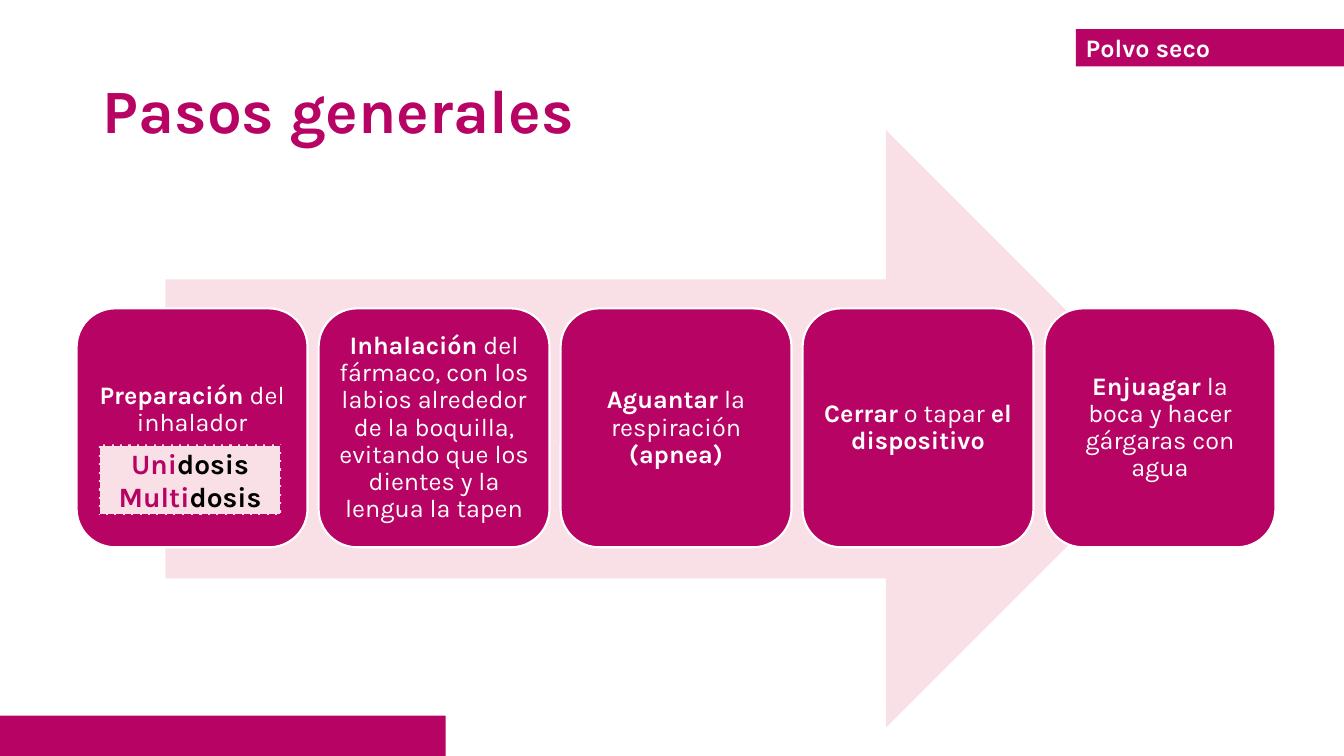
from dataclasses import dataclass

from pptx import Presentation
from pptx.dml.color import RGBColor
from pptx.enum.dml import MSO_LINE
from pptx.enum.shapes import MSO_SHAPE as Preset
from pptx.enum.text import MSO_ANCHOR as Anchor, MSO_AUTO_SIZE as AutoSize, PP_ALIGN as Align
from pptx.shapes.autoshape import Shape
from pptx.slide import Slide
from pptx.util import Emu, Pt

EMU_PER_PX = 9144  # 100 px to the inch
FONT = "Karla"
COLORS = {"magenta": "B70364", "pink": "F9E0E7", "white": "FFFFFF", "black": "000000"}

STEP_LEFT, STEP_TOP, STEP_WIDTH, STEP_HEIGHT = 76, 306, 229, 237
STEP_PITCH = 240
STEP_INSET = 7


@dataclass(frozen=True)
class Span:
    text: str
    bold: bool = True
    color: str = "white"


@dataclass(frozen=True)
class Step:
    spans: tuple[Span, ...]
    bottom_inset: int = STEP_INSET


STEPS = (
    Step((Span("Preparación"), Span(" del inhalador", bold=False)), bottom_inset=43),
    Step((
        Span("Inhalación"),
        Span(" del fármaco, con los labios alrededor de la boquilla, "
             "evitando que los dientes y la lengua la tapen", bold=False),
    )),
    Step((Span("Aguantar"), Span(" la respiración ", bold=False), Span("(apnea)"))),
    Step((Span("Cerrar"), Span(" o tapar ", bold=False), Span("el dispositivo"))),
    Step((Span("Enjuagar"), Span(" la boca y hacer gárgaras con agua", bold=False))),
)
DOSE_TYPES = (
    Span("Uni", color="magenta"), Span("dosis ", color="black"),
    Span("Multi", color="magenta"), Span("dosis", color="black"),
)


def px(length: int) -> Emu:
    return Emu(length * EMU_PER_PX)


def rgb(color: str) -> RGBColor:
    return RGBColor.from_string(COLORS[color])


def add_block(slide: Slide, preset: Preset, left: int, top: int, width: int, height: int,
              fill: str = "magenta", outline: str | None = None) -> Shape:
    block = slide.shapes.add_shape(preset, px(left), px(top), px(width), px(height))
    block.shadow.inherit = False
    block.fill.solid()
    block.fill.fore_color.rgb = rgb(fill)
    if outline:
        block.line.color.rgb = rgb(outline)
        block.line.width = Pt(1.5)
    else:
        block.line.fill.background()
    return block


def write(shape: Shape, *spans: Span, size: int = 18, align: Align = Align.CENTER,
          spacing: float = 1.0, inset: int | None = None,
          bottom_inset: int | None = None) -> None:
    frame = shape.text_frame
    frame.word_wrap = True
    frame.auto_size = AutoSize.NONE
    frame.vertical_anchor = Anchor.MIDDLE
    if inset is not None:
        frame.margin_left = frame.margin_right = px(inset)
        frame.margin_top = frame.margin_bottom = px(inset)
    if bottom_inset is not None:
        frame.margin_bottom = px(bottom_inset)
    paragraph = frame.paragraphs[0]
    paragraph.alignment = align
    paragraph.line_spacing = spacing
    for span in spans:
        run = paragraph.add_run()
        run.text = span.text
        run.font.name = FONT
        run.font.size = Pt(size)
        run.font.bold = span.bold
        run.font.color.rgb = rgb(span.color)


def add_title(slide: Slide) -> None:
    title = slide.shapes.title
    title.left, title.top, title.width, title.height = px(92), px(40), px(1150), px(145)
    write(title, Span("Pasos generales", color="magenta"), size=44,
          align=Align.LEFT, spacing=0.9)


def add_steps(slide: Slide) -> None:
    for index, step in enumerate(STEPS):
        card = add_block(slide, Preset.ROUNDED_RECTANGLE, STEP_LEFT + index * STEP_PITCH,
                         STEP_TOP, STEP_WIDTH, STEP_HEIGHT, outline="white")
        write(card, *step.spans, spacing=0.9, inset=STEP_INSET,
              bottom_inset=step.bottom_inset)


def main() -> None:
    presentation = Presentation()
    presentation.slide_width, presentation.slide_height = px(1333), px(750)
    slide = presentation.slides.add_slide(presentation.slide_layouts[5])

    add_block(slide, Preset.RECTANGLE, 0, 710, 442, 40)
    add_block(slide, Preset.RIGHT_ARROW, 164, 129, 1011, 593, fill="pink")
    add_steps(slide)
    add_title(slide)

    topic_tag = add_block(slide, Preset.RECTANGLE, 1067, 29, 283, 37)
    write(topic_tag, Span("Polvo seco"), align=Align.LEFT)

    dose_box = add_block(slide, Preset.RECTANGLE, 98, 441, 181, 70,
                         fill="pink", outline="magenta")
    dose_box.line.dash_style = MSO_LINE.SQUARE_DOT
    write(dose_box, *DOSE_TYPES, size=20)

    presentation.save("out.pptx")


if __name__ == "__main__":
    main()
